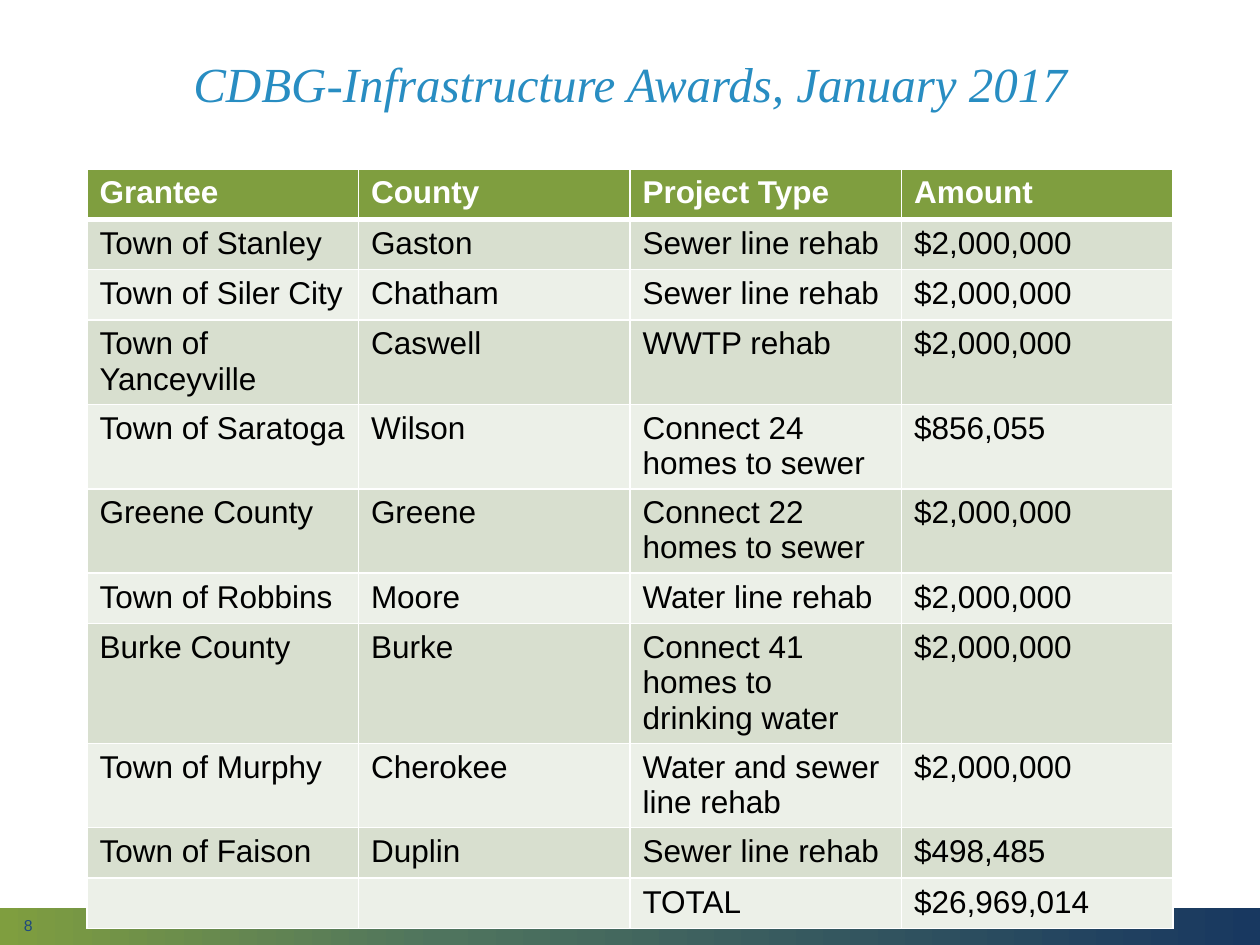
from copy import deepcopy

from pptx import Presentation
from pptx.dml.color import RGBColor
from pptx.enum.shapes import MSO_SHAPE
from pptx.enum.text import MSO_ANCHOR, PP_ALIGN
from pptx.oxml import parse_xml
from pptx.oxml.ns import nsdecls, qn
from pptx.util import Inches, Pt

WIDTH, HEIGHT = 10, 7.5
MARGIN = 0.69
CONTENT_WIDTH = WIDTH - 2 * MARGIN
ROW_HEIGHT, EXTRA_LINE = 0.4, 0.27
LINE_COUNTS = (1, 1, 1, 2, 2, 2, 1, 3, 2, 1, 1)
GREEN, NAVY, WHITE = "7F9E3F", "183860", "FFFFFF"
BANDS = ("ECF0E8", "D8DFCF")
FULL_AWARD = "$2,000,000"

AWARDS = [
    ("Grantee", "County", "Project Type", "Amount"),
    ("Town of Stanley", "Gaston", "Sewer line rehab", FULL_AWARD),
    ("Town of Siler City", "Chatham", "Sewer line rehab", FULL_AWARD),
    ("Town of Yanceyville", "Caswell", "WWTP rehab", FULL_AWARD),
    ("Town of Saratoga", "Wilson", "Connect 24 homes to sewer", "$856,055"),
    ("Greene County", "Greene", "Connect 22 homes to sewer", FULL_AWARD),
    ("Town of Robbins", "Moore", "Water line rehab", FULL_AWARD),
    ("Burke County", "Burke", "Connect 41 homes to drinking water", FULL_AWARD),
    ("Town of Murphy", "Cherokee", "Water and sewer line rehab", FULL_AWARD),
    ("Town of Faison", "Duplin", "Sewer line rehab", "$498,485"),
    ("", "", "TOTAL", "$26,969,014"),
]


def color(value):
    return RGBColor.from_string(value)


def add_run(paragraph, text, size, hue, name="Arial", bold=False, italic=False):
    run = paragraph.add_run()
    run.text = text
    font = run.font
    font.name, font.size, font.bold, font.italic = name, Pt(size), bold, italic
    font.color.rgb = color(hue)


def add_text(slide, box, text, size, hue, align=PP_ALIGN.LEFT, **style):
    shape = slide.shapes.add_textbox(*map(Inches, box))
    frame = shape.text_frame
    frame.word_wrap = True
    frame.vertical_anchor = MSO_ANCHOR.MIDDLE
    paragraph = frame.paragraphs[0]
    paragraph.alignment = align
    add_run(paragraph, text, size, hue, **style)
    return paragraph


def add_footer_band(slide, box, stops):
    shape = slide.shapes.add_shape(MSO_SHAPE.RECTANGLE, *map(Inches, box))
    shape.shadow.inherit = False
    shape.line.fill.background()
    shape.fill.gradient()
    shape.fill.gradient_angle = 0
    stop_list = shape._element.spPr.find(".//" + qn("a:gsLst"))
    stop_list.append(deepcopy(stop_list[0]))
    for stop, (position, hue) in zip(shape.fill.gradient_stops, stops):
        stop.position = position
        stop.color.rgb = color(hue)


def set_borders(cell, top, bottom):
    properties = cell._tc.get_or_add_tcPr()
    for side, width in (("L", 1), ("R", 1), ("T", top), ("B", bottom)):
        properties.append(parse_xml(
            f'<a:ln{side} {nsdecls("a")} w="{Pt(width)}"><a:solidFill>'
            f'<a:srgbClr val="{WHITE}"/></a:solidFill></a:ln{side}>'))


def fill_cell(cell, text, row):
    header = row == 0
    set_borders(cell, 3 if row == 1 else 1, 3 if header else 1)
    cell.margin_bottom = 0
    cell.fill.solid()
    cell.fill.fore_color.rgb = color(GREEN if header else BANDS[row % 2])
    if text:
        add_run(cell.text_frame.paragraphs[0], text, 18,
                WHITE if header else "000000", bold=header)


def add_award_table(slide, top):
    rows, columns = len(AWARDS), len(AWARDS[0])
    heights = [ROW_HEIGHT + EXTRA_LINE * (lines - 1) for lines in LINE_COUNTS]
    box = (MARGIN, top, CONTENT_WIDTH, sum(heights))
    table = slide.shapes.add_table(rows, columns, *map(Inches, box)).table
    for column in table.columns:
        column.width = Inches(CONTENT_WIDTH / columns)
    for row, (award, height) in enumerate(zip(AWARDS, heights)):
        table.rows[row].height = Inches(height)
        for column, text in enumerate(award):
            fill_cell(table.cell(row, column), text, row)


def main():
    presentation = Presentation()
    presentation.slide_width = Inches(WIDTH)
    presentation.slide_height = Inches(HEIGHT)
    slide = presentation.slides.add_slide(presentation.slide_layouts[6])
    add_footer_band(slide, (0, 7.21, WIDTH, HEIGHT - 7.21),
                    [(0, GREEN), (0.35, "4F745E"), (1, NAVY)])
    title = add_text(slide, (MARGIN, 0.11, CONTENT_WIDTH, 1.16),
                     "CDBG-Infrastructure Awards, January 2017", 28, "288DC2",
                     PP_ALIGN.CENTER, name="Times New Roman", italic=True)
    title.line_spacing = 0.9
    add_award_table(slide, 1.34)
    add_text(slide, (0.09, 7.27, 2.25, 0.15), "8", 9, "1F497D")
    presentation.save("out.pptx")


if __name__ == "__main__":
    main()
